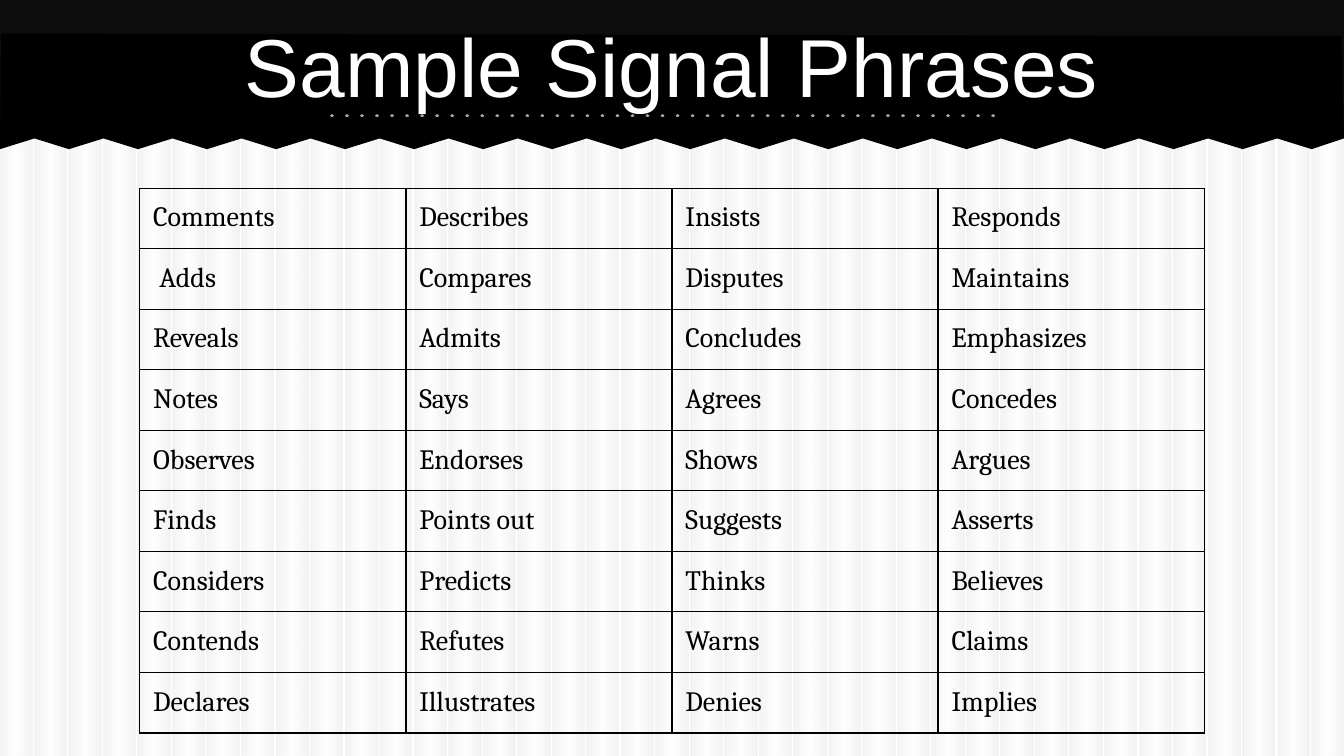
"""Build the "Sample Signal Phrases" slide: striped page, zigzag header and a table of verbs."""
import pptx
import pptx.dml.color
import pptx.enum.shapes
import pptx.enum.text
import pptx.oxml
import pptx.oxml.ns
import pptx.util

COLORS = {
    "page": "FFFFFF",
    "stripe": "BFBFBF",
    "band": "0C0C0C",
    "zigzag": "000000",
    "dots": "94AE8E",
    "title": "FFFFFF",
    "text": "000000",
    "border": "000000",
}
VERBS = [
    ["Comments", "Describes", "Insists", "Responds"],
    [" Adds", "Compares", "Disputes", "Maintains"],
    ["Reveals", "Admits", "Concludes", "Emphasizes"],
    ["Notes", "Says", "Agrees", "Concedes"],
    ["Observes", "Endorses", "Shows", "Argues"],
    ["Finds", "Points out", "Suggests", "Asserts"],
    ["Considers", "Predicts", "Thinks", "Believes"],
    ["Contends", "Refutes", "Warns", "Claims"],
    ["Declares", "Illustrates", "Denies", "Implies"],
]
RECT = pptx.enum.shapes.MSO_SHAPE.RECTANGLE
INSET = pptx.util.Inches(0.1)
NS = pptx.oxml.ns.nsdecls("a")


def rgb(name):
    return pptx.dml.color.RGBColor.from_string(COLORS[name])


def write(tf, text, *, size, font, color, align="LEFT", anchor="TOP"):
    tf.word_wrap = True
    tf.vertical_anchor = pptx.enum.text.MSO_ANCHOR[anchor]
    tf.margin_left = tf.margin_right = tf.margin_top = tf.margin_bottom = INSET
    p = tf.paragraphs[0]
    p.alignment = pptx.enum.text.PP_ALIGN[align]
    r = p.add_run()
    r.text = text
    r.font.size = pptx.util.Pt(size)
    r.font.name = font
    r.font.color.rgb = rgb(color)


prs = pptx.Presentation()
prs.slide_width = pptx.util.Inches(10)
prs.slide_height = prs.slide_width * 9 // 16
col, row = prs.slide_width / 100, prs.slide_height / 100
s = prs.slides.add_slide(prs.slide_layouts[6])
s.background.fill.solid()
s.background.fill.fore_color.rgb = rgb("page")

steps = 38
pitch = 97.6 * col / steps
stops = [(0, "stripe"), (50, "page"), (97, "stripe"), (100, "stripe")]
for i in range(steps + 1):
    sp = s.shapes.add_shape(RECT, int(i * pitch), int(0.18 * row), int(2.4 * col), int(99.82 * row))
    sp.shadow.inherit = False
    sp.line.fill.background()
    sp.fill.gradient()
    sp.fill.gradient_angle = 0
    gs_list = sp.fill.gradient_stops and sp._element.spPr.find(".//" + pptx.oxml.ns.qn("a:gsLst"))
    for gs in list(gs_list):
        gs_list.remove(gs)
    for pos, name in stops:
        gs_list.append(pptx.oxml.parse_xml(
            f'<a:gs {NS} pos="{pos * 1000}"><a:srgbClr val="{COLORS[name]}">'
            '<a:alpha val="19000"/></a:srgbClr></a:gs>'))

band = s.shapes.add_shape(RECT, 0, 0, prs.slide_width, int(18.13 * row))
teeth = [(i * pitch, (18.31 if i % 2 else 19.73) * row) for i in range(steps, -1, -1)]
outline = [(99.8 * col, 4.8 * row), (100 * col, 18.31 * row)] + teeth
builder = s.shapes.build_freeform(int(0.1 * col), int(4.44 * row), scale=1.0)
builder.add_line_segments([(int(x), int(y)) for x, y in outline], close=True)
zigzag = builder.convert_to_shape()
for sp, name in [(band, "band"), (zigzag, "zigzag")]:
    sp.shadow.inherit = False
    sp.line.fill.background()
    sp.fill.solid()
    sp.fill.fore_color.rgb = rgb(name)

y = int(15.29 * row)
dots = s.shapes.add_connector(pptx.enum.shapes.MSO_CONNECTOR.STRAIGHT, int(24.7 * col), y, int(75 * col), y)
dots.line.color.rgb = rgb("dots")
dots.line.width = pptx.util.Pt(2)
ln = dots.line._get_or_add_ln()
ln.set("cap", "rnd")
ln.append(pptx.oxml.parse_xml(f'<a:prstDash {NS} val="dot"/>'))
dots._element.spPr.append(pptx.oxml.parse_xml(f"<a:effectLst {NS}/>"))

title = s.shapes.add_textbox(int(5 * col), int(0.18 * row), int(90 * col), int(16.7 * row))
write(title.text_frame, "Sample Signal Phrases", size=44, font="Arial", color="title",
      align="CENTER", anchor="MIDDLE")

cell_w, cell_h = int(19.8 * col), int(7.47 * row)
n_rows, n_cols = len(VERBS), len(VERBS[0])
tbl = s.shapes.add_table(n_rows, n_cols, int(10.4 * col), int(24.89 * row),
                         cell_w * n_cols, cell_h * n_rows).table
tbl.first_row = tbl.horz_banding = False
for c in tbl.columns:
    c.width = cell_w
for line, verbs in zip(tbl.rows, VERBS):
    line.height = cell_h
    for cell, verb in zip(line.cells, verbs):
        cell.margin_left = cell.margin_right = cell.margin_top = cell.margin_bottom = INSET
        write(cell.text_frame, verb, size=15, font="Cambria", color="text")
        body = cell.text_frame._txBody.bodyPr
        body.attrib.clear()
        tc_pr = cell._tc.get_or_add_tcPr()
        for side in ("lnL", "lnR", "lnT", "lnB"):
            tc_pr.append(pptx.oxml.parse_xml(
                f'<a:{side} {NS} w="9525"><a:solidFill><a:srgbClr val="{COLORS["border"]}"/>'
                f"</a:solidFill></a:{side}>"))
        cell.fill.background()

prs.save("out.pptx")
